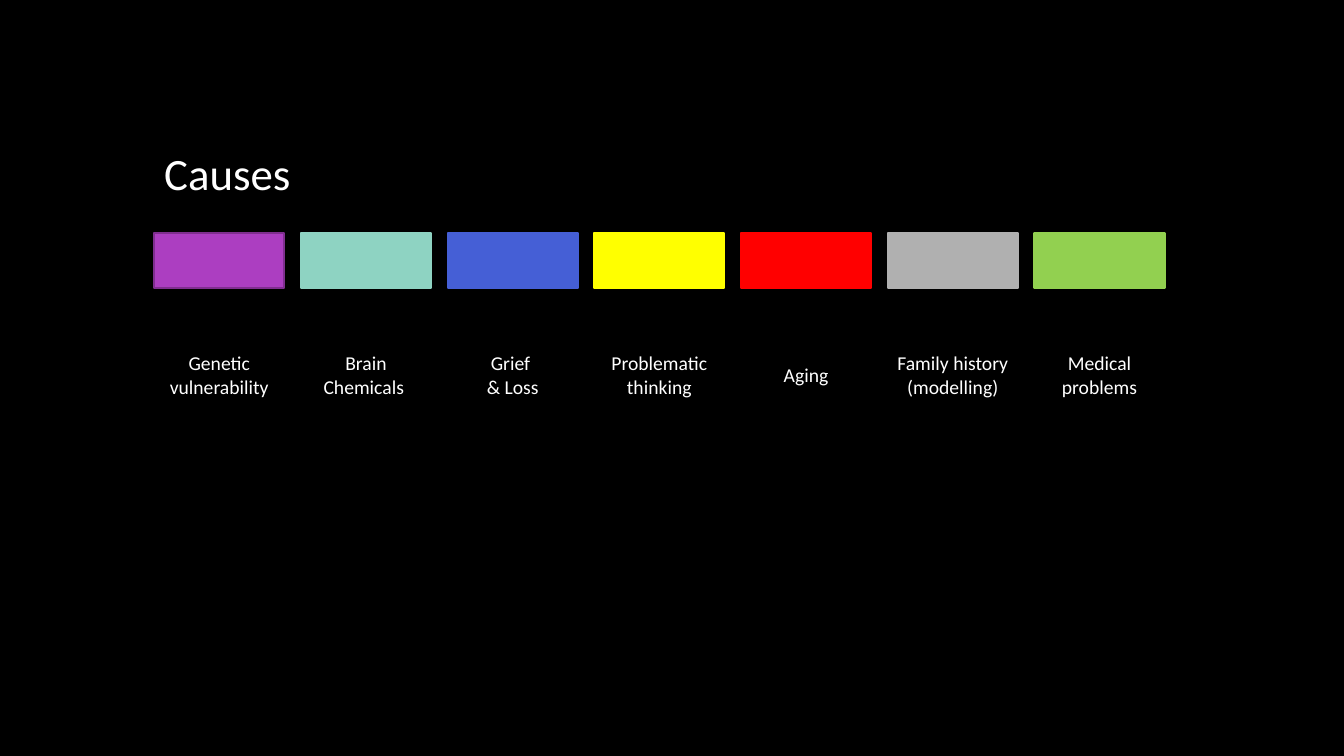
"""Build the slide that lists the causes as a row of coloured blocks."""
from dataclasses import dataclass

from pptx import Presentation
from pptx.dml.color import RGBColor
from pptx.enum.shapes import MSO_SHAPE as Shape
from pptx.enum.text import MSO_ANCHOR as Anchor, MSO_AUTO_SIZE as AutoSize, PP_ALIGN as Align
from pptx.slide import Slide
from pptx.util import Inches, Pt


@dataclass(frozen=True)
class Theme:
    """Colours and type sizes of the slide."""
    background: str = "000000"
    text: str = "FFFFFF"
    purple: str = "AC3EC1"
    dark_purple: str = "7F2E8F"
    mint: str = "8ED3C2"
    blue: str = "455FD6"
    yellow: str = "FFFF00"
    red: str = "FF0000"
    grey: str = "B0B0B0"
    green: str = "92D050"
    font: str = "Calibri"
    title_size: int = 32
    label_size: int = 14
    outline: float = 1.5


@dataclass(frozen=True)
class Grid:
    """Equal columns between two edges, with the rows in inches."""
    left: float = 1.53
    right: float = 11.55
    column_width: float = 1.29
    columns: int = 7
    title_top: float = 1.4
    block_top: float = 2.31
    block_height: float = 0.55
    label_middle: float = 3.72

    def column_left(self, column: int) -> float:
        """Return the left edge of a column."""
        pitch = (self.right - self.left - self.column_width) / (self.columns - 1)
        return self.left + column * pitch


@dataclass(frozen=True)
class Box:
    """A rectangle in inches."""
    left: float
    top: float
    width: float
    height: float

    def lengths(self) -> list[Inches]:
        """Return the four lengths for a shape call."""
        return [Inches(value) for value in (self.left, self.top, self.width, self.height)]


@dataclass(frozen=True)
class Cause:
    """A block with its label."""
    label: str
    label_width: float
    fill: str
    line: str = ""
    wrap: bool = False
    label_height: float = 0.57


THEME = Theme()
GRID = Grid()
CAUSES = (
    Cause("Genetic vulnerability", 1.55, THEME.purple, line=THEME.dark_purple, wrap=True),
    Cause("Brain\vChemicals ", 1.05, THEME.mint),
    Cause("Grief \v& Loss", 0.72, THEME.blue),
    Cause("Problematic\vthinking", 1.16, THEME.yellow),
    Cause("Aging", 0.65, THEME.red, label_height=0.34),
    Cause("Family history\v(modelling)", 1.31, THEME.grey),
    Cause("Medical\vproblems", 0.95, THEME.green),
)


def add_text(slide: Slide, text: str, box: Box, size: int, align: Align, wrap: bool) -> None:
    """Add one paragraph of text in a box that fits it."""
    frame = slide.shapes.add_textbox(*box.lengths()).text_frame
    frame.word_wrap = wrap
    frame.auto_size = AutoSize.SHAPE_TO_FIT_TEXT
    frame.vertical_anchor = Anchor.TOP
    paragraph = frame.paragraphs[0]
    paragraph.text = text
    paragraph.alignment = align
    for run in paragraph.runs:
        run.font.name = THEME.font
        run.font.size = Pt(size)
        run.font.color.rgb = RGBColor.from_string(THEME.text)


def add_block(slide: Slide, cause: Cause, column: int) -> None:
    """Add the coloured block of a cause."""
    box = Box(GRID.column_left(column), GRID.block_top, GRID.column_width, GRID.block_height)
    block = slide.shapes.add_shape(Shape.RECTANGLE, *box.lengths())
    block.shadow.inherit = False
    block.fill.solid()
    block.fill.fore_color.rgb = RGBColor.from_string(cause.fill)
    block.line.color.rgb = RGBColor.from_string(cause.line or cause.fill)
    block.line.width = Pt(THEME.outline)


def add_label(slide: Slide, cause: Cause, column: int) -> None:
    """Add the label of a cause, centred under its block."""
    centre = GRID.column_left(column) + GRID.column_width / 2
    box = Box(centre - cause.label_width / 2, GRID.label_middle - cause.label_height / 2,
              cause.label_width, cause.label_height)
    add_text(slide, cause.label, box, THEME.label_size, Align.CENTER, cause.wrap)


def main() -> None:
    """Build and save the presentation."""
    presentation = Presentation()
    presentation.slide_width = Inches(13.33)
    presentation.slide_height = Inches(7.5)
    slide = presentation.slides.add_slide(presentation.slide_layouts[6])
    slide.background.fill.solid()
    slide.background.fill.fore_color.rgb = RGBColor.from_string(THEME.background)

    for column, cause in enumerate(CAUSES):
        add_block(slide, cause, column)
    title_box = Box(GRID.left, GRID.title_top, 2.51, 0.64)
    add_text(slide, "Causes", title_box, THEME.title_size, Align.LEFT, True)
    for column, cause in enumerate(CAUSES):
        add_label(slide, cause, column)

    presentation.save("out.pptx")


if __name__ == "__main__":
    main()
